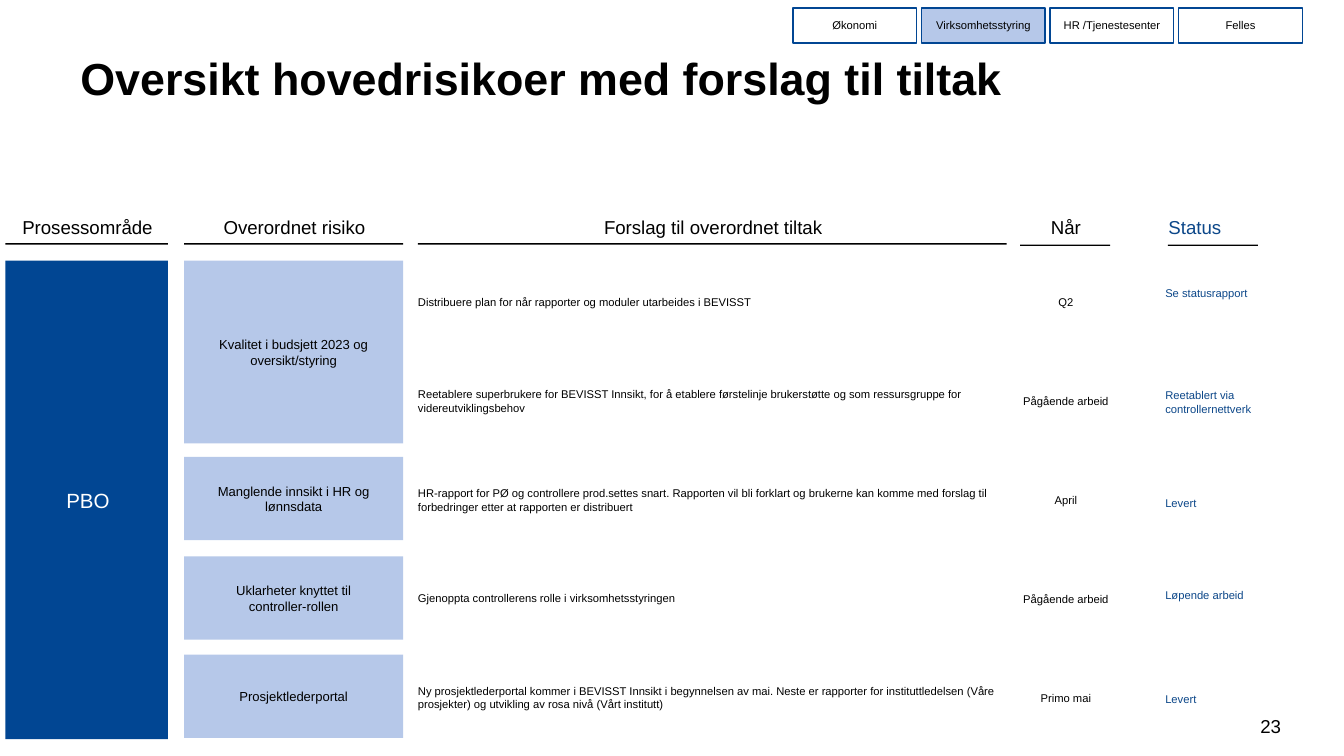
from pptx import Presentation
from pptx.dml.color import RGBColor
from pptx.enum.shapes import MSO_SHAPE
from pptx.enum.text import MSO_ANCHOR, PP_ALIGN
from pptx.util import Inches, Pt

RECT = MSO_SHAPE.RECTANGLE
MIDDLE = MSO_ANCHOR.MIDDLE
LEFT, CENTER = PP_ALIGN.LEFT, PP_ALIGN.CENTER
BLACK, WHITE, NAVY, PALE, STATUS = "000000", "FFFFFF", "014693", "B6C8E9", "0C4789"

prs = Presentation()
prs.slide_width = Inches(10)
prs.slide_height = Inches(10 * 9 / 16)
s = prs.slides.add_slide(prs.slide_layouts[6])


def add_box(x, y, w, h, fill=None, line=None):
    sp = s.shapes.add_shape(RECT, Inches(x), Inches(y), Inches(w), Inches(h))
    sp.shadow.inherit = False
    if fill:
        sp.fill.solid()
        sp.fill.fore_color.rgb = RGBColor.from_string(fill)
    else:
        sp.fill.background()
    if line:
        sp.line.color.rgb = RGBColor.from_string(line)
        sp.line.width = Pt(0.75)
    else:
        sp.line.fill.background()
    return sp


def add_text(x, y, w, h, text, size, color=BLACK, align=CENTER, inset=0, bold=False, sp=None):
    sp = sp or s.shapes.add_textbox(Inches(x), Inches(y), Inches(w), Inches(h))
    tf = sp.text_frame
    tf.word_wrap = True
    tf.margin_left = tf.margin_right = Inches(inset)
    tf.margin_top = tf.margin_bottom = Inches(inset / 2)
    tf.text = text
    for p in tf.paragraphs:
        p.alignment = align
        for r in p.runs:
            r.font.name = "Arial"
            r.font.size = Pt(size)
            r.font.bold = bold
            r.font.color.rgb = RGBColor.from_string(color)
    return sp


add_text(9.27, 5.27, 0.37, 0.3, "23", 10, inset=0.1)
add_text(0.5, 0.33, 8.33, 0.51, "Oversikt hovedrisikoer med forslag til tiltak", 24,
         align=LEFT, inset=0.1, bold=True)

columns = [
    ("Prosessområde", 0.04, 0.04, 1.81, 1.21, BLACK),
    ("Overordnet risiko", 1.37, 1.37, 1.81, 1.63, BLACK),
    ("Forslag til overordnet tiltak", 3.11, 3.11, 1.81, 4.38, BLACK),
    ("Når", 7.59, 7.59, 1.82, 0.67, BLACK),
    ("Status", 8.55, 8.69, 1.82, 0.67, STATUS),
]
for head, x, rule_x, rule_y, w, color in columns:
    add_box(rule_x, rule_y, w, 0.01, BLACK)
    add_text(x, 1.61, w + 0.01, 0.17, head, 10, color)

measures = [
    ("Distribuere plan for når rapporter og moduler utarbeides i BEVISST",
     "Q2", "Se statusrapport", 2.13),
    ("Reetablere superbrukere for BEVISST Innsikt, for å etablere førstelinje brukerstøtte "
     "og som ressursgruppe for\vvidereutviklingsbehov",
     "Pågående arbeid", "Reetablert via controllernettverk", 2.89),
    ("HR-rapport for PØ og controllere prod.settes snart. Rapporten vil bli forklart og "
     "brukerne kan komme med forslag til\vforbedringer etter at rapporten er distribuert",
     "April", "Levert", 3.69),
    ("Gjenoppta controllerens rolle i virksomhetsstyringen",
     "Pågående arbeid", "Løpende arbeid", 4.38),
    ("Ny prosjektlederportal kommer i BEVISST Innsikt i begynnelsen av mai. Neste er "
     "rapporter for instituttledelsen (Våre\vprosjekter) og utvikling av rosa nivå (Vårt institutt)",
     "Primo mai", "Levert", 5.15),
]
for i, (measure, when, status, status_y) in enumerate(measures):
    middle = 2.25 + i * 0.735
    h = 0.2 if "\v" in measure else 0.11
    add_text(3.11, middle - h / 2, 4.39, h, measure, 6, align=LEFT)
    add_text(7.59, middle - 0.05, 0.68, 0.11, when, 6)
    add_text(8.67, status_y, 0.68, 0.2, status, 6, STATUS, LEFT)

risks = [
    (1.94, 1.36, 0.23, "Kvalitet i budsjett 2023 og\voversikt/styring"),
    (3.4, 0.62, 0.23, "Manglende innsikt i HR og\vlønnsdata"),
    (4.14, 0.62, 0.23, "Uklarheter knyttet til\ncontroller-rollen"),
    (4.87, 0.62, 0.12, "Prosjektlederportal"),
]
for y, h, text_h, risk in risks:
    add_box(1.37, y, 1.63, h, PALE)
    add_text(1.42, y + (h - text_h) / 2, 1.53, text_h, risk, 7)

add_box(0.04, 1.94, 1.21, 3.56, NAVY)
add_text(0.1, 3.63, 1.11, 0.18, "PBO", 11, WHITE)

tabs = ["Økonomi", "Virksomhetsstyring", "HR /Tjenestesenter", "Felles"]
for i, name in enumerate(tabs):
    x = 5.9 + i * 2.87 / 3
    sp = add_box(x, 0.06, 0.92, 0.26, PALE if name == "Virksomhetsstyring" else None, NAVY)
    add_text(x, 0.06, 0.92, 0.26, name, 6, inset=0.05, sp=sp)
    sp.text_frame.vertical_anchor = MIDDLE

prs.save("out.pptx")
